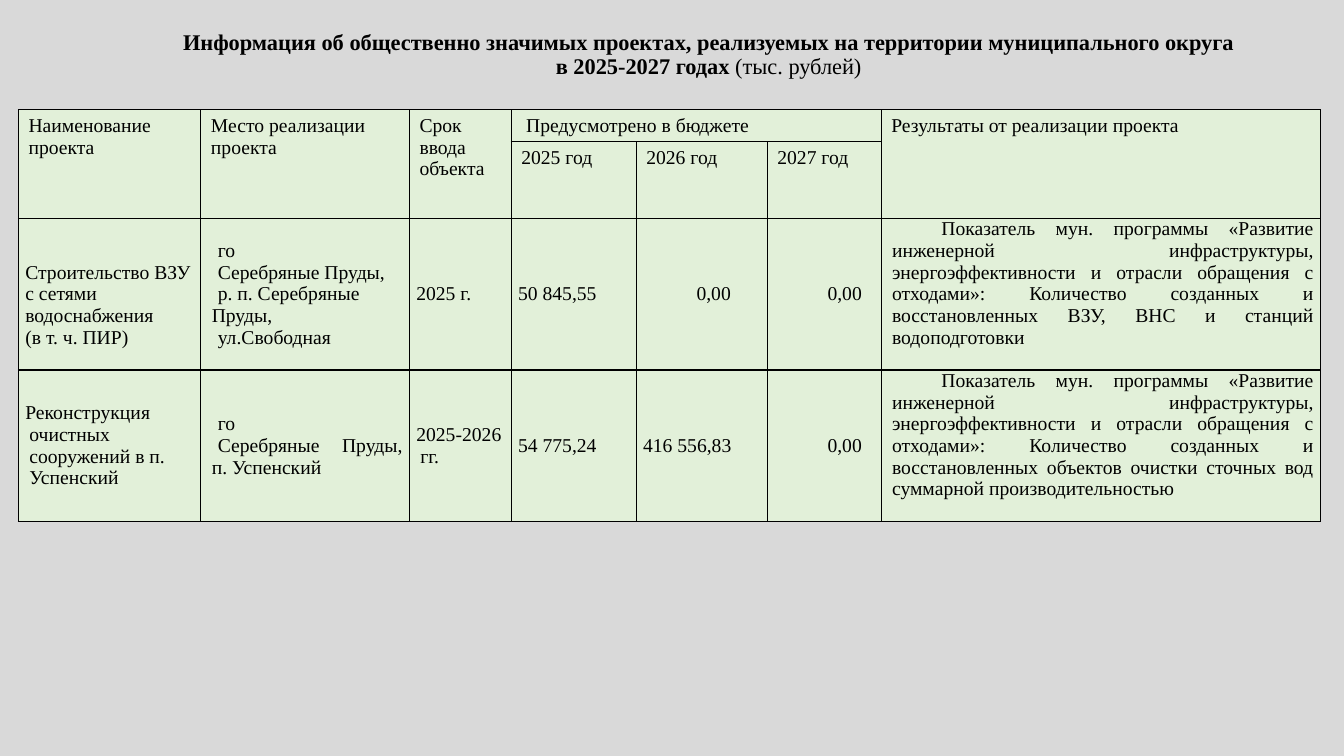
from dataclasses import dataclass

from lxml import etree
from pptx import Presentation
from pptx import util as u
from pptx.dml.color import RGBColor
from pptx.enum import text
from pptx.oxml import ns

COLOURS = {"page": "D9D9D9", "cell": "E2F0D9", "ink": "000000"}
FONT = "Times New Roman"
LEFT, JUSTIFY, CENTER = text.PP_ALIGN.LEFT, text.PP_ALIGN.JUSTIFY, text.PP_ALIGN.CENTER
TOP, MIDDLE = text.MSO_ANCHOR.TOP, text.MSO_ANCHOR.MIDDLE

COLUMN_WIDTHS = (130.3, 149, 72.7, 89.3, 93.6, 81.4, 313.9)
ROW_HEIGHTS = (22.4, 54.7, 108.4, 108.4)
HEADER_MARGINS = (7.2, 3.6)
BODY_MARGINS = (4.9, 0)


@dataclass(frozen=True)
class Style:
    """Paragraph format; margin and first-line indent are in points."""
    align: text.PP_ALIGN = LEFT
    margin: float = 0
    indent: float = 0
    anchor: text.MSO_ANCHOR = MIDDLE


@dataclass(frozen=True)
class Entry:
    row: int
    column: int
    lines: tuple[str, ...]
    style: Style = Style()
    rows: int = 1
    columns: int = 1


HEADER = Style(anchor=TOP)
BUDGET = Style(indent=3.5, anchor=TOP)
OPENING = Style(indent=38.2)
PLACE = Style(LEFT, 2.9, 4.3)
PLACE_WIDE = Style(JUSTIFY, 2.9, 4.3)
HANGING = Style(JUSTIFY, 2.9, -2.9)
AMOUNT = Style(JUSTIFY, 2.9, 35.3)
RESULT = Style(JUSTIFY, 2.9, 35.3, TOP)

GOAL = ("Показатель мун. программы «Развитие инженерной инфраструктуры, энергоэффективности "
        "и отрасли обращения с отходами»: Количество созданных и восстановленных ")

ENTRIES = (
    Entry(0, 0, ("Наименование проекта",), HEADER, rows=2),
    Entry(0, 1, ("Место реализации проекта",), HEADER, rows=2),
    Entry(0, 2, ("Срок ввода объекта",), HEADER, rows=2),
    Entry(0, 3, ("Предусмотрено в бюджете",), BUDGET, columns=3),
    Entry(0, 6, ("Результаты от реализации проекта",), HEADER, rows=2),
    *(Entry(1, 3 + i, (f"{2025 + i} год",), HEADER) for i in range(3)),
    Entry(2, 0, (" Строительство ВЗУ c сетями водоснабжения", "(в т. ч. ПИР)"), OPENING),
    Entry(2, 1, ("го", "Серебряные Пруды,", "р. п. Серебряные Пруды,", "ул.Свободная"), PLACE),
    Entry(2, 2, ("2025 г.",)),
    Entry(2, 3, ("50 845,55",)),
    Entry(2, 4, ("0,00",), AMOUNT),
    Entry(2, 5, ("0,00",), AMOUNT),
    Entry(2, 6, (GOAL + "ВЗУ, ВНС и станций водоподготовки",), RESULT),
    Entry(3, 0, ("Реконструкция очистных сооружений в п. Успенский",), Style(LEFT, 2.9, -2.9)),
    Entry(3, 1, ("го", "Серебряные Пруды, п. Успенский"), PLACE_WIDE),
    Entry(3, 2, ("2025-2026 гг.",), HANGING),
    Entry(3, 3, ("54 775,24",), HANGING),
    Entry(3, 4, ("416 556,83",), HANGING),
    Entry(3, 5, ("0,00",), AMOUNT),
    Entry(3, 6, (GOAL + "объектов очистки сточных вод суммарной производительностью",), RESULT),
)


def colour(name: str) -> RGBColor:
    return RGBColor.from_string(COLOURS[name])


def add_span(para, words: str, *, size: float = 14, bold: bool = False) -> None:
    span = para.add_run()
    span.text = words
    span.font.name = FONT
    span.font.size = u.Pt(size)
    span.font.bold = bold
    span.font.color.rgb = colour("ink")


def format_cell(cell, margins: tuple[float, float]) -> None:
    """Set fill, margins and a thin border on all four sides."""
    cell.margin_left = cell.margin_right = u.Pt(margins[0])
    cell.margin_top = cell.margin_bottom = u.Pt(margins[1])
    cell.fill.solid()
    cell.fill.fore_color.rgb = colour("cell")
    properties = cell._tc.get_or_add_tcPr()
    for position, side in enumerate(("lnL", "lnR", "lnT", "lnB")):
        line = etree.Element(ns.qn(f"a:{side}"), w=str(u.Pt(1)))
        fill = etree.SubElement(line, ns.qn("a:solidFill"))
        etree.SubElement(fill, ns.qn("a:srgbClr"), val=COLOURS["ink"])
        properties.insert(position, line)


def fill_entry(table, entry: Entry) -> None:
    cell = table.cell(entry.row, entry.column)
    if entry.rows > 1 or entry.columns > 1:
        cell.merge(table.cell(entry.row + entry.rows - 1, entry.column + entry.columns - 1))
    style = entry.style
    cell.vertical_anchor = style.anchor
    for number, line in enumerate(entry.lines):
        para = cell.text_frame.add_paragraph() if number else cell.text_frame.paragraphs[0]
        para.alignment = style.align
        properties = para._p.get_or_add_pPr()
        properties.set("marL", str(u.Pt(style.margin)))
        # Only a line that opens the first column is indented there.
        indent = 0 if style is OPENING and number else style.indent
        properties.set("indent", str(u.Pt(indent)))
        add_span(para, line)


def add_title(page) -> None:
    box = page.shapes.title
    box.left, box.top, box.width, box.height = map(u.Pt, (31, -38.9, 950.4, 173.5))
    frame = box.text_frame
    frame.word_wrap = True
    frame.auto_size = text.MSO_AUTO_SIZE.NONE
    frame.vertical_anchor = MIDDLE
    frame.margin_bottom = u.Pt(20)
    para = frame.paragraphs[0]
    para.alignment = CENTER
    para.line_spacing = 0.9
    add_span(para, "Информация об общественно значимых проектах, "
             "реализуемых на территории муниципального округа", size=16, bold=True)
    para.add_line_break()
    add_span(para, "в 2025-2027 годах", size=16, bold=True)
    add_span(para, " (тыс. рублей)", size=16)


def add_projects_table(page) -> None:
    table = page.shapes.add_table(
        len(ROW_HEIGHTS), len(COLUMN_WIDTHS), u.Pt(13.2), u.Pt(78.5),
        u.Pt(sum(COLUMN_WIDTHS)), u.Pt(sum(ROW_HEIGHTS))).table
    table.first_row = table.horz_banding = False
    for column, width in zip(table.columns, COLUMN_WIDTHS):
        column.width = u.Pt(width)
    for number, (row, height) in enumerate(zip(table.rows, ROW_HEIGHTS)):
        row.height = u.Pt(height)
        for cell in row.cells:
            format_cell(cell, HEADER_MARGINS if number < 2 else BODY_MARGINS)
    for entry in ENTRIES:
        fill_entry(table, entry)


def main() -> None:
    deck = Presentation()
    deck.slide_width, deck.slide_height = u.Pt(960), u.Pt(540)
    page = deck.slides.add_slide(deck.slide_layouts.get_by_name("Title Only"))
    page.background.fill.solid()
    page.background.fill.fore_color.rgb = colour("page")
    add_title(page)
    add_projects_table(page)
    deck.save("out.pptx")


if __name__ == "__main__":
    main()
